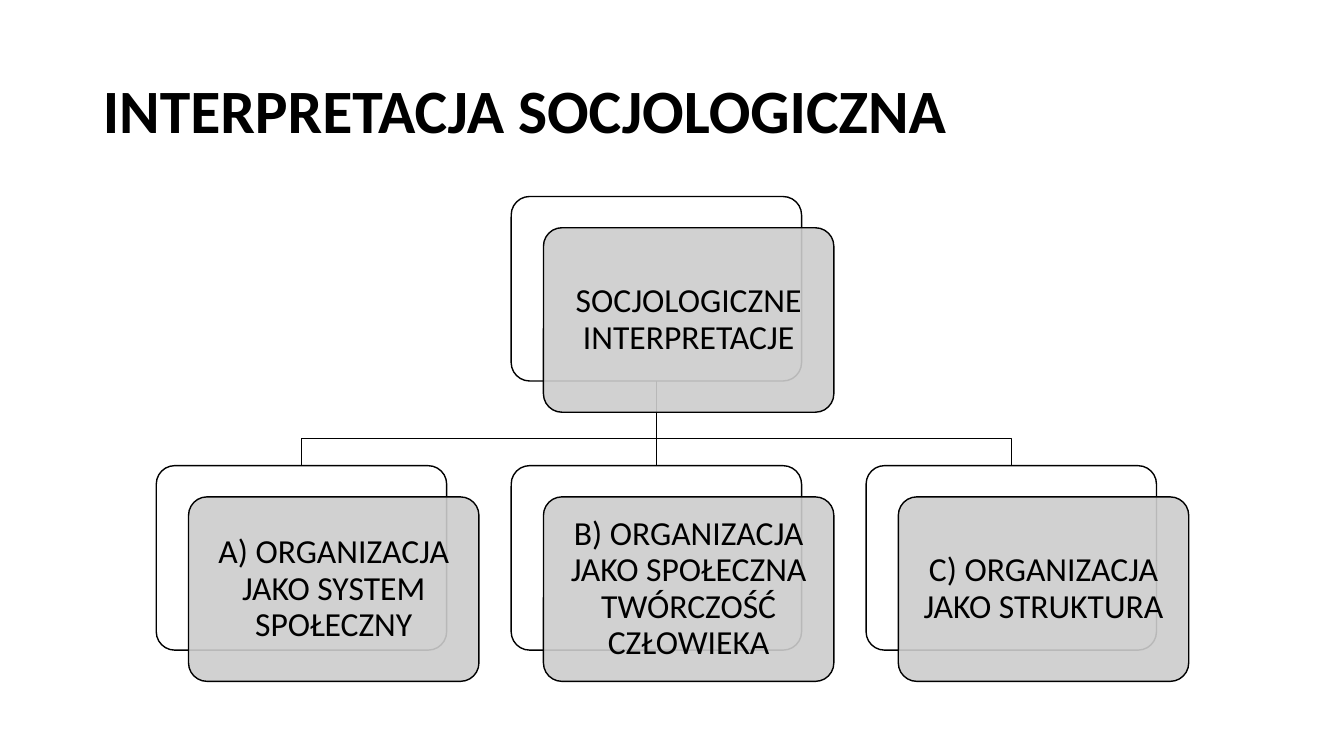
import pptx
import pptx.dml.color
import pptx.enum.shapes
import pptx.enum.text
import pptx.oxml.ns
import pptx.util
from lxml import etree
from pptx.util import Inches

# Content
HEADING = "INTERPRETACJA SOCJOLOGICZNA"
ROOT = "SOCJOLOGICZNE INTERPRETACJE"
BRANCHES = [
    "A) ORGANIZACJA JAKO SYSTEM SPOŁECZNY",
    "B) ORGANIZACJA JAKO SPOŁECZNA TWÓRCZOŚĆ CZŁOWIEKA",
    "C) ORGANIZACJA JAKO STRUKTURA",
]

THEME = {
    "font": "Calibri",
    "ink": "000000",
    "back": "FFFFFF",
    "front": "CCCCCC",
    "front_alpha": 90,
    "title_size": 44,
    "card_size": 24,
    "line_width": 1,
}

# Geometry in inches
CARD_W, CARD_H = 2.88, 1.83
FRONT_DX, FRONT_DY = 0.32, 0.31
FIRST_X, COLUMN_STEP = 1.55, 3.52
ROOT_Y, BRANCH_Y, BEND_Y = 1.95, 4.62, 4.35
CORNER, INSET = 0.1, 0.1
MIDDLE = len(BRANCHES) // 2

column_x = [FIRST_X + i * COLUMN_STEP for i in range(len(BRANCHES))]
root_x = column_x[MIDDLE]


def color(key):
    return pptx.dml.color.RGBColor.from_string(THEME[key])


def draw_line(shape):
    shape.line.color.rgb = color("ink")
    shape.line.width = pptx.util.Pt(THEME["line_width"])


def style_text(frame, size, bold=False):
    frame.word_wrap = True
    frame.vertical_anchor = pptx.enum.text.MSO_ANCHOR.MIDDLE
    for paragraph in frame.paragraphs:
        paragraph.line_spacing = 0.9
        for run in paragraph.runs:
            run.font.name = THEME["font"]
            run.font.size = pptx.util.Pt(THEME[size])
            run.font.bold = bold
            run.font.color.rgb = color("ink")


def add_panel(x, y, fill):
    panel = slide.shapes.add_shape(
        pptx.enum.shapes.MSO_SHAPE.ROUNDED_RECTANGLE,
        Inches(x), Inches(y), Inches(CARD_W), Inches(CARD_H))
    panel.adjustments[0] = CORNER
    panel.shadow.inherit = False
    panel.fill.solid()
    panel.fill.fore_color.rgb = color(fill)
    draw_line(panel)
    return panel


def add_card(label, x, y):
    """Draw a card with its translucent front panel; return the back panel."""
    back = add_panel(x, y, "back")
    front = add_panel(x + FRONT_DX, y + FRONT_DY, "front")
    rgb = front.fill._xPr.find(".//" + pptx.oxml.ns.qn("a:srgbClr"))
    alpha = etree.SubElement(rgb, pptx.oxml.ns.qn("a:alpha"))
    alpha.set("val", str(THEME["front_alpha"] * 1000))
    frame = front.text_frame
    frame.text = label
    frame.margin_left = frame.margin_right = Inches(INSET)
    frame.margin_top = frame.margin_bottom = Inches(INSET)
    frame.paragraphs[0].alignment = pptx.enum.text.PP_ALIGN.CENTER
    style_text(frame, "card_size")
    return back


def add_bent_branch(x):
    """Draw the bent line from the root card to the card at x."""
    start, end = root_x + CARD_W / 2, x + CARD_W / 2
    top = ROOT_Y + CARD_H
    builder = slide.shapes.build_freeform(Inches(start), Inches(top))
    corners = [(start, BEND_Y), (end, BEND_Y), (end, BRANCH_Y)]
    builder.add_line_segments(
        [(Inches(px), Inches(py)) for px, py in corners], close=False)
    branch = builder.convert_to_shape()
    branch.fill.background()
    branch.shadow.inherit = False
    draw_line(branch)


presentation = pptx.Presentation()
presentation.slide_width = Inches(13.33)
presentation.slide_height = Inches(7.5)
slide = presentation.slides.add_slide(presentation.slide_layouts[5])

# Title
title = slide.shapes.title
title.left, title.top = Inches(0.92), Inches(0.4)
title.width, title.height = Inches(11.5), Inches(1.45)
title.text_frame.text = HEADING
title.text_frame.paragraphs[0].alignment = pptx.enum.text.PP_ALIGN.LEFT
style_text(title.text_frame, "title_size", bold=True)

# Branch lines, behind the cards
for i, x in enumerate(column_x):
    if i != MIDDLE:
        add_bent_branch(x)
trunk = slide.shapes.add_connector(
    pptx.enum.shapes.MSO_CONNECTOR.STRAIGHT,
    Inches(root_x + CARD_W / 2), Inches(ROOT_Y + CARD_H),
    Inches(root_x + CARD_W / 2), Inches(BRANCH_Y))
draw_line(trunk)
etree.SubElement(trunk._element.spPr, pptx.oxml.ns.qn("a:effectLst"))

# Cards
root_card = add_card(ROOT, root_x, ROOT_Y)
branch_cards = [add_card(label, x, BRANCH_Y)
                for label, x in zip(BRANCHES, column_x)]
trunk.begin_connect(root_card, 2)
trunk.end_connect(branch_cards[MIDDLE], 0)

presentation.save("out.pptx")
